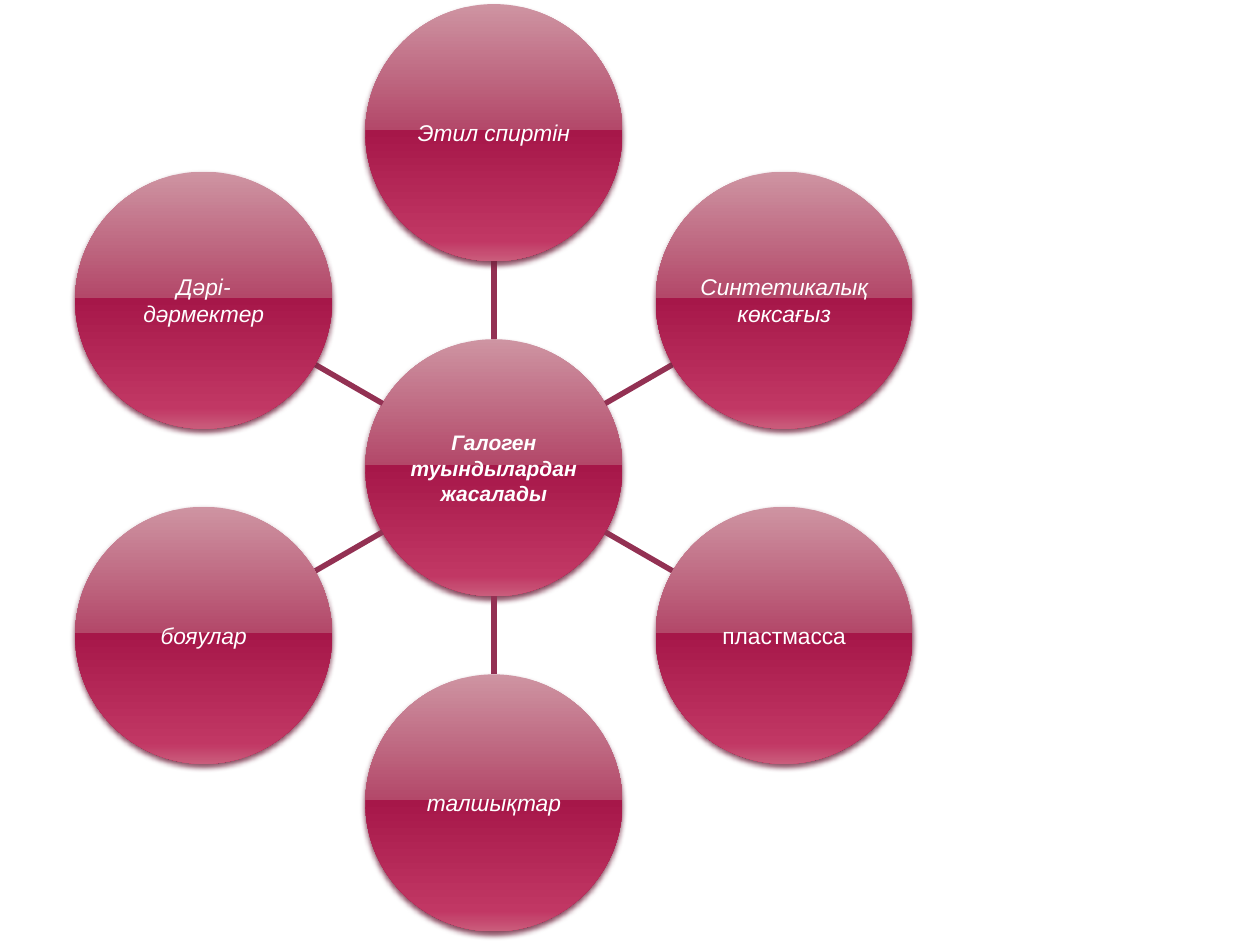
from dataclasses import dataclass
from math import cos, radians, sin

from lxml.etree import SubElement
from pptx import Presentation
from pptx.dml.color import RGBColor
from pptx.enum.shapes import MSO_CONNECTOR, MSO_SHAPE
from pptx.enum.text import MSO_ANCHOR, PP_ALIGN
from pptx.oxml.ns import qn
from pptx.util import Inches, Pt


@dataclass(frozen=True)
class Theme:
    font: str = "Arial"
    text: str = "FFFFFF"
    spoke: str = "933153"
    shadow: str = "722640"
    gloss: tuple = ((0, "CE94A2"), (49, "B34869"), (49, "A61749"),
                    (92, "C13764"), (100, "CA5D7C"))
    hub_size: float = 12
    node_size: float = 13
    spoke_width: float = 3.15
    inset: float = 0.01


WIDTH, HEIGHT = 10, 7.5
CENTER_X, CENTER_Y = 0.392 * WIDTH, 0.495 * HEIGHT
RADIUS = 0.102 * WIDTH
ORBIT = 0.266 * WIDTH

HUB = ["Галоген", "туындылардан", "жасалады"]
NODES = [  # clockwise from the top: lines, italic
    (["Этил спиртін"], True),
    (["Синтетикалық", "көксағыз"], True),
    (["пластмасса"], False),
    (["талшықтар"], True),
    (["бояулар"], True),
    (["Дәрі-", "дәрмектер"], True),
]


def add_color(parent, color):
    return SubElement(parent, qn("a:srgbClr"), val=color)


def polar(angle, distance):
    """Point at a distance from the hub's centre."""
    return (CENTER_X + distance * cos(angle), CENTER_Y + distance * sin(angle))


class RadialSlide:
    def __init__(self, slide, theme):
        self.slide = slide
        self.theme = theme

    def spoke(self, angle):
        start, end = polar(angle, RADIUS), polar(angle, ORBIT - RADIUS)
        line = self.slide.shapes.add_connector(
            MSO_CONNECTOR.STRAIGHT, *map(Inches, start + end))
        line.line.color.rgb = RGBColor.from_string(self.theme.spoke)
        line.line.width = Pt(self.theme.spoke_width)
        SubElement(line._element.spPr, qn("a:effectLst"))

    def circle(self, center, lines, size, bold=False, italic=True):
        x, y = center
        shape = self.slide.shapes.add_shape(
            MSO_SHAPE.OVAL, Inches(x - RADIUS), Inches(y - RADIUS),
            Inches(2 * RADIUS), Inches(2 * RADIUS))
        shape.line.fill.background()
        self.gloss(shape)
        self.soft_shadow(shape)
        self.label(shape.text_frame, lines, size, bold, italic)

    def gloss(self, shape):
        shape.fill.gradient()
        shape.fill.gradient_angle = 270
        stops = shape._element.spPr.find(".//" + qn("a:gsLst"))
        stops.clear()
        for position, color in self.theme.gloss:
            add_color(SubElement(stops, qn("a:gs"), pos=str(position * 1000)), color)

    def soft_shadow(self, shape):
        shape.shadow.inherit = False
        effects = shape._element.spPr.find(qn("a:effectLst"))
        shadow = SubElement(effects, qn("a:outerShdw"), blurRad=str(Pt(3.1)),
                            dist=str(Pt(2)), dir="5400000", rotWithShape="0")
        SubElement(add_color(shadow, self.theme.shadow), qn("a:alpha"), val="83000")

    def label(self, frame, lines, size, bold, italic):
        frame.word_wrap = False
        frame.vertical_anchor = MSO_ANCHOR.MIDDLE
        inset = Inches(self.theme.inset)
        frame.margin_left = frame.margin_right = inset
        frame.margin_top = frame.margin_bottom = inset
        for index, text in enumerate(lines):
            para = frame.add_paragraph() if index else frame.paragraphs[0]
            para.text = text
            para.alignment = PP_ALIGN.CENTER
            font = para.font
            font.name, font.size = self.theme.font, Pt(size)
            font.bold, font.italic = bold, italic
            font.color.rgb = RGBColor.from_string(self.theme.text)


def main():
    deck = Presentation()
    deck.slide_width, deck.slide_height = Inches(WIDTH), Inches(HEIGHT)
    theme = Theme()
    page = RadialSlide(deck.slides.add_slide(deck.slide_layouts[6]), theme)
    page.circle((CENTER_X, CENTER_Y), HUB, theme.hub_size, bold=True)
    for index, (lines, italic) in enumerate(NODES):
        angle = radians(index * 360 / len(NODES) - 90)
        page.spoke(angle)
        page.circle(polar(angle, ORBIT), lines, theme.node_size, italic=italic)
    deck.save("out.pptx")


if __name__ == "__main__":
    main()
